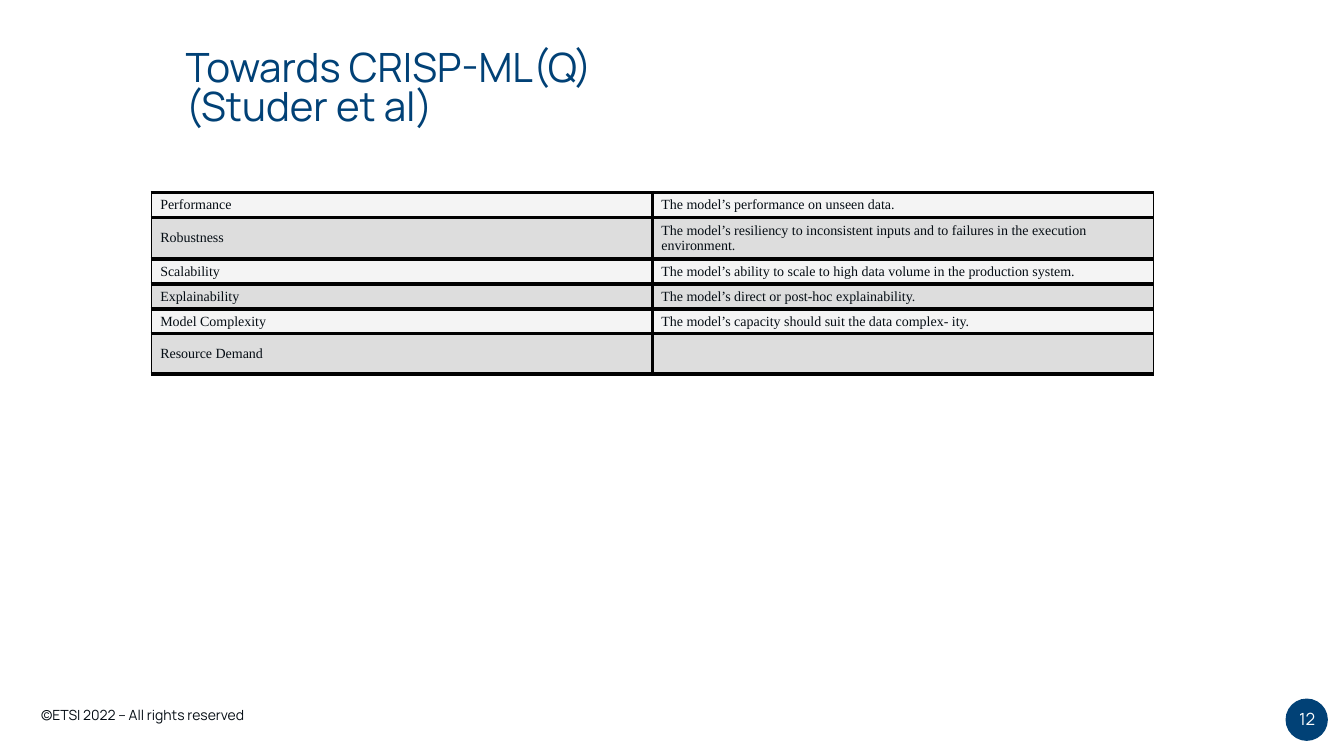
from lxml import etree
from pptx import Presentation
from pptx.dml.color import RGBColor
from pptx.enum.shapes import MSO_SHAPE
from pptx.enum.text import MSO_ANCHOR, MSO_AUTO_SIZE, PP_ALIGN
from pptx.oxml.ns import qn
from pptx.util import Inches, Pt

OVAL = MSO_SHAPE.OVAL
TOP, MIDDLE = MSO_ANCHOR.TOP, MSO_ANCHOR.MIDDLE
LEFT, CENTER = PP_ALIGN.LEFT, PP_ALIGN.CENTER
NO_FIT = MSO_AUTO_SIZE.NONE
NAVY, INK, WHITE, BLACK = "014176", "050D14", "FFFFFF", "000000"
BAND_FILLS = ("F4F4F4", "DDDDDD")
SANS, SERIF = "Manrope", "Times New Roman"
THIN, THICK = 1, 2.67
ROWS = [
    ("Performance", "The model’s performance on unseen data.", 0.24),
    ("Robustness", "The model’s resiliency to inconsistent inputs and to failures "
     "in the execution environment.", 0.4),
    ("Scalability", "The model’s ability to scale to high data volume in the "
     "production system.", 0.24),
    ("Explainability", "The model’s direct or post-hoc explainability.", 0.24),
    ("Model Complexity", "The model’s capacity should suit the data complex- ity.", 0.24),
    ("Resource Demand", "", 0.4),
]


def color(value):
    return RGBColor.from_string(value)


def style(paragraph, size, name, ink, align=LEFT):
    paragraph.alignment = align
    paragraph.font.size = Pt(size)
    paragraph.font.name = name
    paragraph.font.color.rgb = color(ink)


def place(shape, box):
    shape.left, shape.top, shape.width, shape.height = (Inches(part) for part in box)


def add_title(slide, box):
    title = slide.shapes.title
    place(title, box)
    frame = title.text_frame
    frame.text = "Towards CRISP-ML(Q)\v(Studer et al)"
    frame.auto_size = NO_FIT
    frame.vertical_anchor = TOP
    frame.margin_top = Inches(0.07)
    paragraph = frame.paragraphs[0]
    paragraph.line_spacing = 0.8
    style(paragraph, 28.8, SANS, NAVY)


def set_border(cell, side, width):
    line = etree.SubElement(cell._tc.get_or_add_tcPr(), qn(f"a:ln{side}"), w=str(Pt(width)))
    fill = etree.SubElement(line, qn("a:solidFill"))
    etree.SubElement(fill, qn("a:srgbClr"), val=BLACK)


def fill_cell(cell, text, fill, left_width, right_width):
    for side, width in zip("LRTB", (left_width, right_width, THICK, THICK)):
        set_border(cell, side, width)
    cell.fill.solid()
    cell.fill.fore_color.rgb = color(fill)
    cell.vertical_anchor = MIDDLE
    cell.margin_left = cell.margin_right = Inches(0.09)
    cell.margin_top = cell.margin_bottom = Inches(0.04)
    cell.text = text
    style(cell.text_frame.paragraphs[0], 10, SERIF, INK)


def add_quality_table(slide, box):
    table = slide.shapes.add_table(len(ROWS), 2, *(Inches(part) for part in box)).table
    table.first_row = table.horz_banding = False
    for column in table.columns:
        column.width = Inches(box[2] / 2)
    for index, (measure, meaning, height) in enumerate(ROWS):
        table.rows[index].height = Inches(height)
        fill = BAND_FILLS[index % 2]
        fill_cell(table.cell(index, 0), measure, fill, THIN, THICK)
        fill_cell(table.cell(index, 1), meaning, fill, THICK, THIN)


def add_label(slide, box, text, size, ink, align=LEFT, anchor=TOP, wrap=False):
    label = slide.shapes.add_textbox(*(Inches(part) for part in box))
    frame = label.text_frame
    frame.word_wrap = wrap
    frame.vertical_anchor = anchor
    frame.text = text
    style(frame.paragraphs[0], size, SANS, ink, align)


def add_footer(slide, box):
    left, top, width, height = box
    add_label(slide, (left, top + 0.03, 2.36, 0.27), "©ETSI 2022 – All rights reserved", 10, INK)
    right = left + width
    badge = slide.shapes.add_shape(
        OVAL, Inches(right - 0.42), Inches(top), Inches(height), Inches(height))
    badge.shadow.inherit = False
    badge.fill.solid()
    badge.fill.fore_color.rgb = color(NAVY)
    badge.line.fill.background()
    add_label(slide, (right - 0.52, top, 0.63, 0.4), "12", 12, WHITE, CENTER, MIDDLE, True)


def main():
    deck = Presentation()
    deck.slide_width, deck.slide_height = Inches(13.33), Inches(7.5)
    slide = deck.slides.add_slide(deck.slide_layouts[5])
    add_footer(slide, (0.31, 6.93, 12.86, 0.42))
    add_title(slide, (1.74, 0.44, 8.28, 1.11))
    add_quality_table(slide, (1.5, 1.91, 9.94, 1.79))
    deck.save("out.pptx")


if __name__ == "__main__":
    main()
